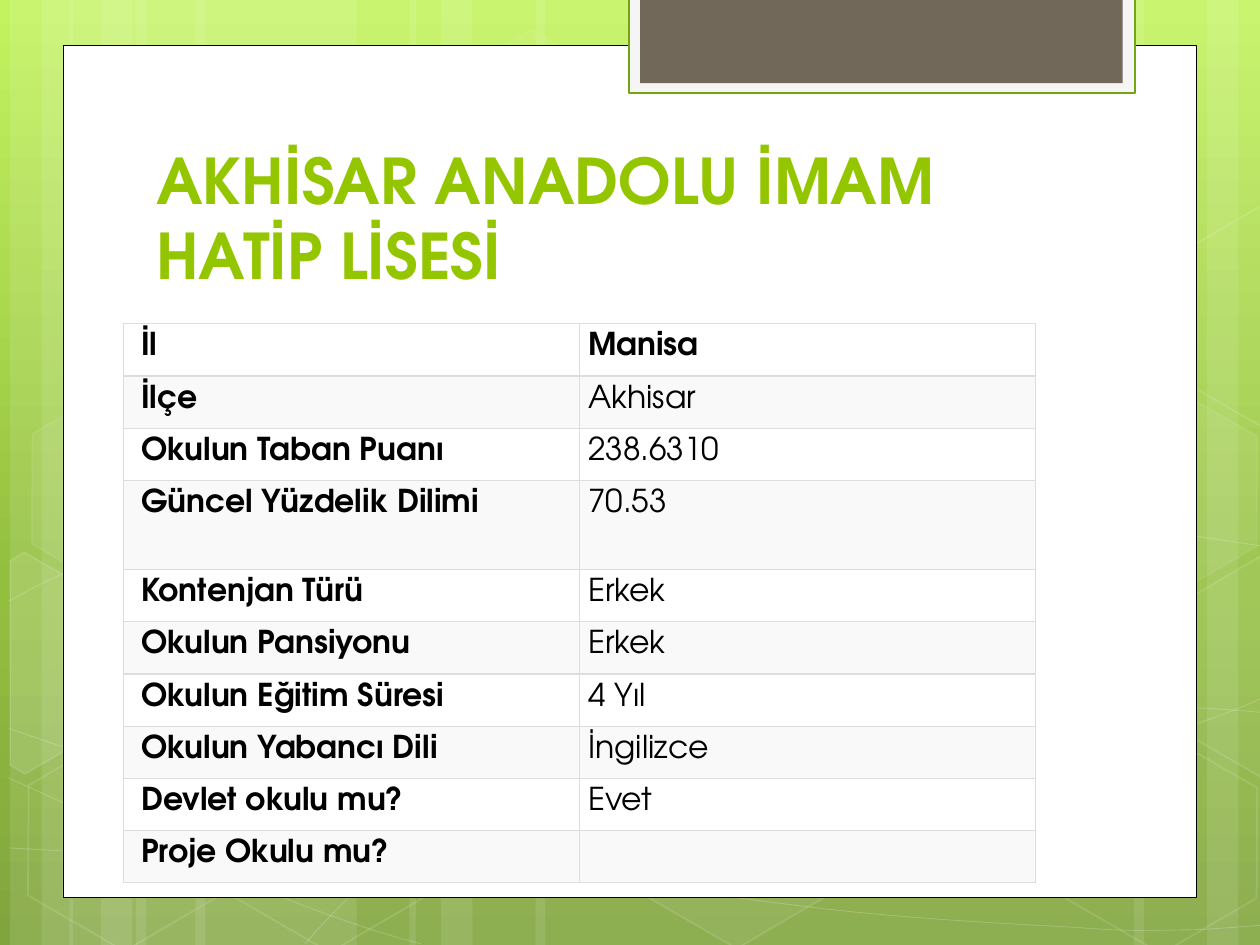
import copy
import dataclasses
import math

import lxml.etree
import pptx
import pptx.dml.color
import pptx.enum.shapes
import pptx.enum.text
import pptx.oxml.ns
import pptx.util

Inches = pptx.util.Inches
Pt = pptx.util.Pt
qn = pptx.oxml.ns.qn
SHAPES = pptx.enum.shapes.MSO_SHAPE


@dataclasses.dataclass(frozen=True)
class Theme:
    """Colours, font and type sizes of the slide."""
    font: str = "TeX Gyre Adventor"
    title_size: int = 36
    table_size: int = 18
    title: str = "94C600"
    ink: str = "000000"
    white: str = "FFFFFF"
    tab: str = "71685A"
    tab_frame: str = "F5F5F5"
    tab_line: str = "74A510"
    row_tint: str = "F9F9F9"
    cell_line: str = "DDDDDD"
    gradient: tuple = ((0, "C3F35F"), (62, "93BF3F"), (100, "81A53E"))


THEME = Theme()
TILT = 30

BANDS = [(1.08, 1.75), (0.08, 0.5), (0.33, 0.83), (1.55, 1.75), (0.55, 0.5), (0.8, 0.83),
         (7.33, 1.75), (9.58, 0.5), (9, 0.83), (4.25, 3.08), (3.25, 0.5), (3.5, 0.83)]

CURVES = [
    [(0.07, 6.73), (0.61, 6.76), (1.15, 6.79), (1.9, 6.78), (2.65, 6.77), (3.58, 6.75), (4.58, 6.65),
     (5.58, 6.55), (7, 6.36), (7.92, 6.17), (8.83, 5.98), (9.77, 5.68), (10.07, 5.51)],
    [(0.07, 4.77), (0.36, 4.61), (0.65, 4.46), (1.21, 4.31), (1.78, 4.16), (2.59, 3.94), (3.47, 3.87),
     (4.36, 3.8), (5.44, 3.79), (6.54, 3.87), (7.64, 3.95), (9.47, 4.26), (10.07, 4.34)],
    [(0.06, 6.17), (1.27, 6.72), (2.47, 7.27), (3.34, 7.49)],
    [(0.07, 5.78), (0.38, 5.89), (0.7, 6), (1.28, 6.16), (1.86, 6.31), (2.73, 6.56), (3.57, 6.73),
     (4.4, 6.9), (5.45, 7.08), (6.28, 7.18), (7.11, 7.29), (8, 7.33), (8.53, 7.36),
     (9.05, 7.4), (9.19, 7.38), (9.45, 7.38), (9.71, 7.37), (9.89, 7.35), (10.07, 7.34)],
    [(2.42, 7.49), (2.6, 7.29), (2.78, 7.09), (3.02, 6.91), (3.26, 6.73), (3.6, 6.53), (3.88, 6.39),
     (4.16, 6.25), (4.33, 6.19), (4.7, 6.09), (5.06, 5.99), (5.73, 5.85), (6.08, 5.78),
     (6.44, 5.71), (6.49, 5.71), (6.8, 5.69), (7.11, 5.66), (7.6, 5.63), (7.94, 5.62),
     (8.29, 5.61), (8.86, 5.62), (8.86, 5.62), (9.08, 5.62), (9.31, 5.62), (9.53, 5.62),
     (9.71, 5.63), (9.88, 5.64), (10.06, 5.66)],
]

HEXAGONS = [(3.34, 0.36, 4, 8), (4.97, 5.89, 6, 12), (0.11, 5.91, None, 12), (0.14, 3.12, 7, 8),
            (1.74, 5.92, None, 12), (8.34, 5.93, None, 12), (8.34, 3.14, 7, 8)]

CUT_HEXAGONS = [
    ((0.36, 5.35), [(0.08, 4.45), (0.19, 4.38), (0.96, 4.82), (0.95, 5.7), (0.2, 6.14), (0.08, 6.07)], 10),
    ((9.85, 5.2), [(9.26, 4.85), (10.01, 4.41), (10.09, 4.46), (10.09, 6.13), (10.02, 6.17), (9.26, 5.73)], 4),
    ((9.85, 2.41), [(9.26, 2.07), (10.01, 1.63), (10.1, 1.68), (10.09, 3.35), (10.02, 3.39), (9.26, 2.95)], None),
]

SCHOOL_FACTS = [
    ("İl", "Manisa"),
    ("İlçe", "Akhisar"),
    ("Okulun Taban Puanı", "238.6310"),
    ("Güncel Yüzdelik Dilimi", "70.53"),
    ("Kontenjan Türü", "Erkek"),
    ("Okulun Pansiyonu", "Erkek"),
    ("Okulun Eğitim Süresi", "4 Yıl"),
    ("Okulun Yabancı Dili", "İngilizce"),
    ("Devlet okulu mu?", "Evet"),
    ("Proje Okulu mu?", ""),
]


def rgb(colour):
    """Turn a hex string into a colour."""
    return pptx.dml.color.RGBColor.from_string(colour)


def paint(fill, colour, opacity=100):
    """Give a fill one colour at the given opacity in percent."""
    if colour is None:
        fill.background()
        return
    fill.solid()
    fill.fore_color.rgb = rgb(colour)
    if opacity < 100:
        element = fill._xPr.find(qn("a:solidFill")).find(qn("a:srgbClr"))
        lxml.etree.SubElement(element, qn("a:alpha"), val=str(opacity * 1000))


def style(shape, fill=None, opacity=100, line=None, width=1, line_opacity=100):
    """Set the fill and outline of a shape and remove its shadow."""
    shape.shadow.inherit = False
    paint(shape.fill, fill, opacity)
    paint(shape.line.fill, line, line_opacity)
    if line:
        shape.line.width = Pt(width)


def add_box(slide, kind, box, **look):
    """Add a styled preset shape in a box given in inches."""
    shape = slide.shapes.add_shape(kind, *map(Inches, box))
    style(shape, **look)
    return shape


def add_outline(slide, points, close, **look):
    """Add a styled freeform through points given in inches."""
    places = [(Inches(x), Inches(y)) for x, y in points]
    builder = slide.shapes.build_freeform(*places[0])
    builder.add_line_segments(places[1:], close=close)
    shape = builder.convert_to_shape()
    style(shape, **look)
    return shape


def bend(shape):
    """Turn each three line segments of a freeform into one Bézier curve."""
    outline = next(shape.element.iter(qn("a:path")))
    segments = outline.findall(qn("a:lnTo"))
    for first in range(0, len(segments), 3):
        curve = lxml.etree.SubElement(outline, qn("a:cubicBezTo"))
        for segment in segments[first:first + 3]:
            curve.append(segment[0])
            outline.remove(segment)


def untilt(point, center):
    """Turn a point back by the tilt angle around a center."""
    x, y = point[0] - center[0], point[1] - center[1]
    cosine, sine = math.cos(math.radians(TILT)), math.sin(math.radians(TILT))
    return center[0] + x * cosine + y * sine, center[1] - x * sine + y * cosine


def add_background(slide):
    """Fill the slide with the vertical green gradient."""
    fill = slide.background.fill
    fill.gradient()
    fill.gradient_angle = 270
    stops = next(slide.element.iter(qn("a:gsLst")))
    stops.append(copy.deepcopy(stops[-1]))
    for stop, (position, colour) in zip(fill.gradient_stops, THEME.gradient):
        stop.position = position / 100
        stop.color.rgb = rgb(colour)


def add_backdrop(slide, height):
    """Place translucent bands, curves and hexagons over the gradient."""
    white = THEME.white
    for left, width in BANDS:
        add_box(slide, SHAPES.RECTANGLE, (left, 0, width, height), fill=white, opacity=10)
    for knots in CURVES:
        bend(add_outline(slide, knots, False, line=white, width=0.5, line_opacity=20))
    for left, top, opacity, line_opacity in HEXAGONS:
        hexagon = add_box(slide, SHAPES.HEXAGON, (left, top, 1.75, 1.52), fill=opacity and white,
                          opacity=opacity or 0, line=white, line_opacity=line_opacity)
        hexagon.adjustments[0] = 0.285
        hexagon.rotation = TILT
    for center, points, opacity in CUT_HEXAGONS:
        level = [untilt(point, center) for point in points]
        cut = add_outline(slide, level, True, fill=opacity and white, opacity=opacity or 0,
                          line=white, line_opacity=12)
        cut.rotation = TILT


def add_panel(slide, box):
    """Place the white sheet and the framed tab at its top right."""
    left, top, width, _ = box
    tab_left = left + width - 4.51
    add_box(slide, SHAPES.RECTANGLE, box, fill=THEME.white, line=THEME.ink, width=0.5)
    add_box(slide, SHAPES.RECTANGLE, (tab_left, top - 0.38, 4.02, 0.76),
            fill=THEME.tab_frame, line=THEME.tab_line, width=1.25)
    add_box(slide, SHAPES.RECTANGLE, (tab_left + 0.09, top - 0.38, 3.83, 0.68), fill=THEME.tab)


def write(text_frame, text, size, colour, bold):
    """Write one paragraph and format its runs."""
    text_frame.text = text
    for run in text_frame.paragraphs[0].runs:
        run.font.name = THEME.font
        run.font.size = Pt(size)
        run.font.bold = bold
        run.font.color.rgb = rgb(colour)


def add_title(slide, box):
    """Place the school name, resting on the bottom of its box."""
    text_frame = slide.shapes.add_textbox(*map(Inches, box)).text_frame
    text_frame.word_wrap = True
    text_frame.vertical_anchor = pptx.enum.text.MSO_ANCHOR.BOTTOM
    write(text_frame, "AKHİSAR ANADOLU İMAM HATİP LİSESİ", THEME.title_size, THEME.title, True)


def add_borders(cell):
    """Draw a thin line on all four sides of a cell."""
    properties = cell._tc.get_or_add_tcPr()
    for side in ("a:lnL", "a:lnR", "a:lnT", "a:lnB"):
        line = lxml.etree.SubElement(properties, qn(side), w=str(Pt(0.75)))
        fill = lxml.etree.SubElement(line, qn("a:solidFill"))
        lxml.etree.SubElement(fill, qn("a:srgbClr"), val=THEME.cell_line)


def add_facts_table(slide, box):
    """Place the two-column table of school facts."""
    table = slide.shapes.add_table(len(SCHOOL_FACTS), 2, *map(Inches, box)).table
    table.first_row = table.horz_banding = False
    for row_index, (label, value) in enumerate(SCHOOL_FACTS):
        table.rows[row_index].height = Pt(51 if row_index == 3 else 29.83)
        for column_index, text in enumerate((" " + label, value)):
            cell = table.cell(row_index, column_index)
            cell.margin_left = cell.margin_right = cell.margin_top = Inches(0.07)
            cell.margin_bottom = Inches(0.04)
            write(cell.text_frame, text, THEME.table_size, THEME.ink, column_index == 0 or row_index == 0)
            add_borders(cell)
            paint(cell.fill, THEME.row_tint if row_index % 2 else None)


def main():
    """Build and save the slide."""
    presentation = pptx.Presentation()
    presentation.slide_width, presentation.slide_height = Inches(10), Inches(7.5)
    slide = presentation.slides.add_slide(presentation.slide_layouts[6])
    add_background(slide)
    add_backdrop(slide, 7.5)
    add_panel(slide, (0.5, 0.36, 9, 6.76))
    add_title(slide, (1.14, 1.12, 7.68, 1.25))
    add_facts_table(slide, (0.98, 2.57, 7.24, 4.44))
    presentation.save("out.pptx")


if __name__ == "__main__":
    main()
